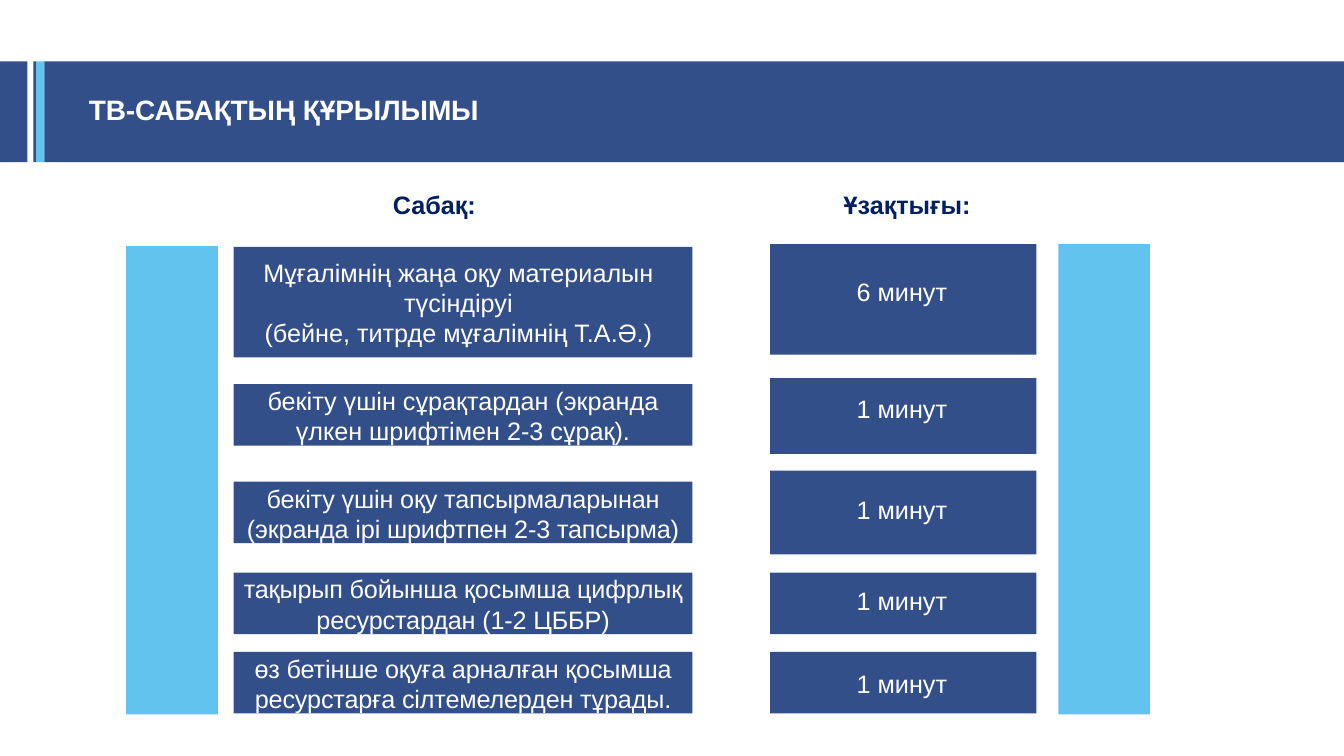
from pptx import Presentation
from pptx import util as u
from pptx.dml.color import RGBColor
from pptx.enum import shapes, text

COLORS = {"navy": "334F89", "sky": "61C3EE", "heading": "002060", "white": "FFFFFF"}
BANNER_TOP, BANNER_HEIGHT = 1.55, 2.54
LESSON_LEFT, LESSON_WIDTH = 5.89, 11.56
DURATION_LEFT, DURATION_WIDTH = 19.41, 6.71
ROW_HEIGHT = 1.55

STRIPES = [
    (0, 0.69, "navy"),
    (0.84, 0.07, "navy"),
    (0.91, 0.21, "sky"),
    (1.12, 32.75, "navy"),
]
DURATIONS = [
    (6.15, 2.79, 6.83, "6 минут"),
    (9.53, 1.91, 9.78, "1 минут"),
    (11.86, 2.11, 12.32, "1 минут"),
    (14.43, ROW_HEIGHT, 14.63, "1 минут"),
    (16.43, ROW_HEIGHT, 16.71, "1 минут"),
]
LESSONS = [
    (9.68, "бекіту үшін сұрақтардан (экранда үлкен шрифтімен 2-3 сұрақ).", 0),
    (12.14, "бекіту үшін оқу тапсырмаларынан (экранда ірі шрифтпен 2-3 тапсырма)", -10),
    (14.43, "тақырып бойынша қосымша цифрлық ресурстардан (1-2 ЦББР)", -10),
    (16.43, "өз бетінше оқуға арналған қосымша ресурстарға сілтемелерден тұрады.", -10),
]
EXPLANATION = ["Мұғалімнің жаңа оқу материалын түсіндіруі", "(бейне, титрде мұғалімнің Т.А.Ә.)"]


class LessonSlide:
    font = "Arial"
    size = 18

    def __init__(self, deck):
        self.slide = deck.slides.add_slide(deck.slide_layouts[5])

    def color(self, name):
        return RGBColor.from_string(COLORS[name])

    def fill_text(self, frame, lines, color="white", size=None, bold=False, align=None, spacing=0):
        frame.text = "\n".join(lines)
        for paragraph in frame.paragraphs:
            paragraph.alignment = align
            paragraph.font.name = self.font
            paragraph.font.size = u.Pt(size or self.size)
            paragraph.font.bold = bold
            paragraph.font.color.rgb = self.color(color)
            if spacing:
                for run in paragraph.runs:
                    run._r.get_or_add_rPr().set("spc", str(spacing))

    def tighten(self, frame):
        frame.margin_left = frame.margin_right = frame.margin_bottom = 0
        frame.margin_top = u.Cm(0.03)
        frame.word_wrap = True

    def title(self, wording, left, top, width, height):
        title = self.slide.shapes.title
        title.left, title.top = u.Cm(left), u.Cm(top)
        title.width, title.height = u.Cm(width), u.Cm(height)
        frame = title.text_frame
        self.tighten(frame)
        frame.auto_size = text.MSO_AUTO_SIZE.NONE
        frame.vertical_anchor = text.MSO_ANCHOR.TOP
        self.fill_text(frame, [wording], size=20, bold=True, align=text.PP_ALIGN.LEFT, spacing=-10)
        frame.paragraphs[0].space_before = u.Pt(1.1)
        title.element.getparent().append(title.element)

    def block(self, left, top, width, height, color="navy"):
        block = self.slide.shapes.add_shape(
            shapes.MSO_SHAPE.RECTANGLE, u.Cm(left), u.Cm(top), u.Cm(width), u.Cm(height))
        block.shadow.inherit = False
        block.fill.solid()
        block.fill.fore_color.rgb = self.color(color)
        block.line.fill.background()
        return block

    def lesson(self, top, wording, spacing):
        frame = self.block(LESSON_LEFT, top, LESSON_WIDTH, ROW_HEIGHT).text_frame
        self.tighten(frame)
        frame.vertical_anchor = text.MSO_ANCHOR.MIDDLE
        self.fill_text(frame, [wording], align=text.PP_ALIGN.CENTER, spacing=spacing)

    def label(self, lines, left, top, width, height=1.02, wrap=False, **style):
        frame = self.slide.shapes.add_textbox(
            u.Cm(left), u.Cm(top), u.Cm(width), u.Cm(height)).text_frame
        frame.word_wrap = wrap
        self.fill_text(frame, lines, **style)


def main():
    deck = Presentation()
    deck.slide_width, deck.slide_height = u.Cm(33.87), u.Cm(19.05)
    page = LessonSlide(deck)

    for left, width, color in STRIPES:
        page.block(left, BANNER_TOP, width, BANNER_HEIGHT, color)
    page.title("ТВ-САБАҚТЫҢ ҚҰРЫЛЫМЫ", 2.24, 2.29, 30.48, 0.89)

    page.block(3.18, 6.2, 2.31, 11.8, "sky")
    page.block(26.67, 6.15, 2.31, 11.85, "sky")

    page.label(["Сабақ:"], 9.65, 4.65, 2.62, color="heading", bold=True)
    page.block(LESSON_LEFT, 6.22, LESSON_WIDTH, 2.79)
    page.label(EXPLANATION, 5.94, 6.35, 11.23, 2.57, wrap=True, align=text.PP_ALIGN.CENTER)
    for top, wording, spacing in LESSONS:
        page.lesson(top, wording, spacing)

    page.label(["Ұзақтығы:"], 21.01, 4.65, 3.76, color="heading", bold=True)
    for top, height, label_top, minutes in DURATIONS:
        page.block(DURATION_LEFT, top, DURATION_WIDTH, height)
        page.label([minutes], 21.34, label_top, 2.82)

    deck.save("out.pptx")


if __name__ == "__main__":
    main()
